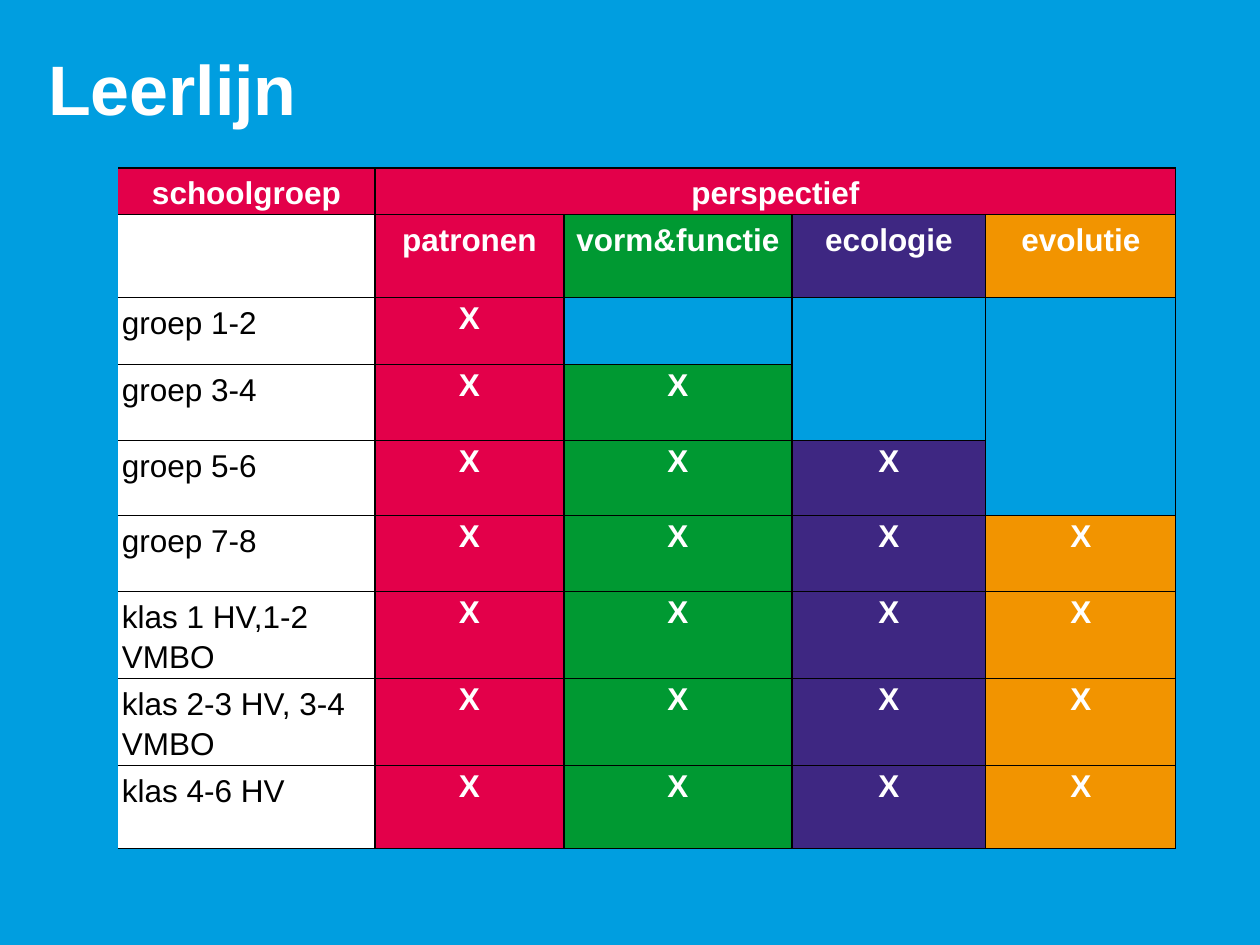
from lxml.etree import SubElement
from pptx import Presentation
from pptx.dml.color import RGBColor
from pptx.enum.text import MSO_ANCHOR, MSO_AUTO_SIZE, PP_ALIGN
from pptx.oxml.ns import qn
from pptx.util import Emu, Pt

COLORS = {"sky": "009EE0", "red": "E3004A", "green": "009932", "purple": "3E2782",
          "orange": "F29400", "white": "FFFFFF", "black": "000000"}
TITLE = "Leerlijn"
HEADERS = ["schoolgroep", "perspectief"]
PERSPECTIVES = [("patronen", "red"), ("vorm&functie", "green"),
                ("ecologie", "purple"), ("evolutie", "orange")]
GROUPS = [("groep 1-2", 1), ("groep 3-4", 2), ("groep 5-6", 3), ("groep 7-8", 4),
          ("klas 1 HV,1-2 VMBO", 4), ("klas 2-3 HV, 3-4 VMBO", 4), ("klas 4-6 HV", 4)]
COL_WIDTHS = [257, 189, 228, 194, 190]
ROW_HEIGHTS = [46, 83, 67, 76, 75, 76, 86, 87, 83]
TABLE_LEFT, TABLE_TOP = 118, 168


def px(n):
    return Emu(round(n * 914400 / 126))


def rgb(name):
    return RGBColor.from_string(COLORS[name])


def style_run(r, size, color, bold):
    r.font.name = "Arial"
    r.font.size = Pt(size)
    r.font.bold = bold
    r.font.color.rgb = rgb(color)


def set_borders(cell, hidden):
    tcPr = cell._tc.get_or_add_tcPr()
    for side in "LRTB":
        ln = SubElement(tcPr, qn(f"a:ln{side}"), w=str(Pt(0.75)))
        if side in hidden:
            SubElement(ln, qn("a:noFill"))
        else:
            fill = SubElement(ln, qn("a:solidFill"))
            SubElement(fill, qn("a:srgbClr"), val=COLORS["black"])


def fill_cell(cell, text, fill, color="white", bold=True, align=PP_ALIGN.CENTER,
              spacing=1.15, hidden=""):
    set_borders(cell, hidden)
    cell.margin_left = cell.margin_right = px(4)
    cell.margin_top = cell.margin_bottom = px(3)
    cell.vertical_anchor = MSO_ANCHOR.TOP
    if fill:
        cell.fill.solid()
        cell.fill.fore_color.rgb = rgb(fill)
    else:
        cell.fill.background()
    if text:
        cell.text_frame.text = text
        p = cell.text_frame.paragraphs[0]
        p.alignment = align
        p.line_spacing = spacing
        style_run(p.runs[0], 18, color, bold)


def add_title(s):
    title = s.shapes.title
    title.left, title.top, title.width, title.height = px(48), px(55), px(992), px(132)
    tf = title.text_frame
    tf.text = TITLE
    tf.word_wrap = True
    tf.auto_size = MSO_AUTO_SIZE.NONE
    tf.vertical_anchor = MSO_ANCHOR.TOP
    tf.margin_left = tf.margin_right = tf.margin_top = tf.margin_bottom = 0
    p = tf.paragraphs[0]
    p.alignment = PP_ALIGN.LEFT
    p.line_spacing = 0.9
    style_run(p.runs[0], 40, "white", True)


def add_learning_table(s):
    table = s.shapes.add_table(len(ROW_HEIGHTS), len(COL_WIDTHS), px(TABLE_LEFT), px(TABLE_TOP),
                               px(sum(COL_WIDTHS)), px(sum(ROW_HEIGHTS))).table
    table.first_row = table.horz_banding = False
    for column, width in zip(table.columns, COL_WIDTHS):
        column.width = px(width)
    for row, height in zip(table.rows, ROW_HEIGHTS):
        row.height = px(height)

    table.cell(0, 1).merge(table.cell(0, len(PERSPECTIVES)))
    fill_cell(table.cell(0, 0), HEADERS[0], "red", hidden="L")
    fill_cell(table.cell(1, 0), "", "white", hidden="L")
    for c, (name, color) in enumerate(PERSPECTIVES, 1):
        fill_cell(table.cell(0, c), HEADERS[1] if c == 1 else "", "red")
        fill_cell(table.cell(1, c), name, color)

    for i, (group, reached) in enumerate(GROUPS):
        fill_cell(table.cell(i + 2, 0), group, "white", "black", False, PP_ALIGN.LEFT, hidden="L")
        for c, (_, color) in enumerate(PERSPECTIVES, 1):
            cell = table.cell(i + 2, c)
            if c <= reached:
                fill_cell(cell, "X", color, spacing=1.0)
            else:
                above = "T" if i > 0 else ""
                below = "B" if c > GROUPS[i + 1][1] else ""
                fill_cell(cell, "", None, hidden=above + below)


def main():
    prs = Presentation()
    prs.slide_width, prs.slide_height = px(1260), px(945)
    s = prs.slides.add_slide(prs.slide_layouts[5])
    s.background.fill.solid()
    s.background.fill.fore_color.rgb = rgb("sky")
    add_title(s)
    add_learning_table(s)
    prs.save("out.pptx")


if __name__ == "__main__":
    main()
